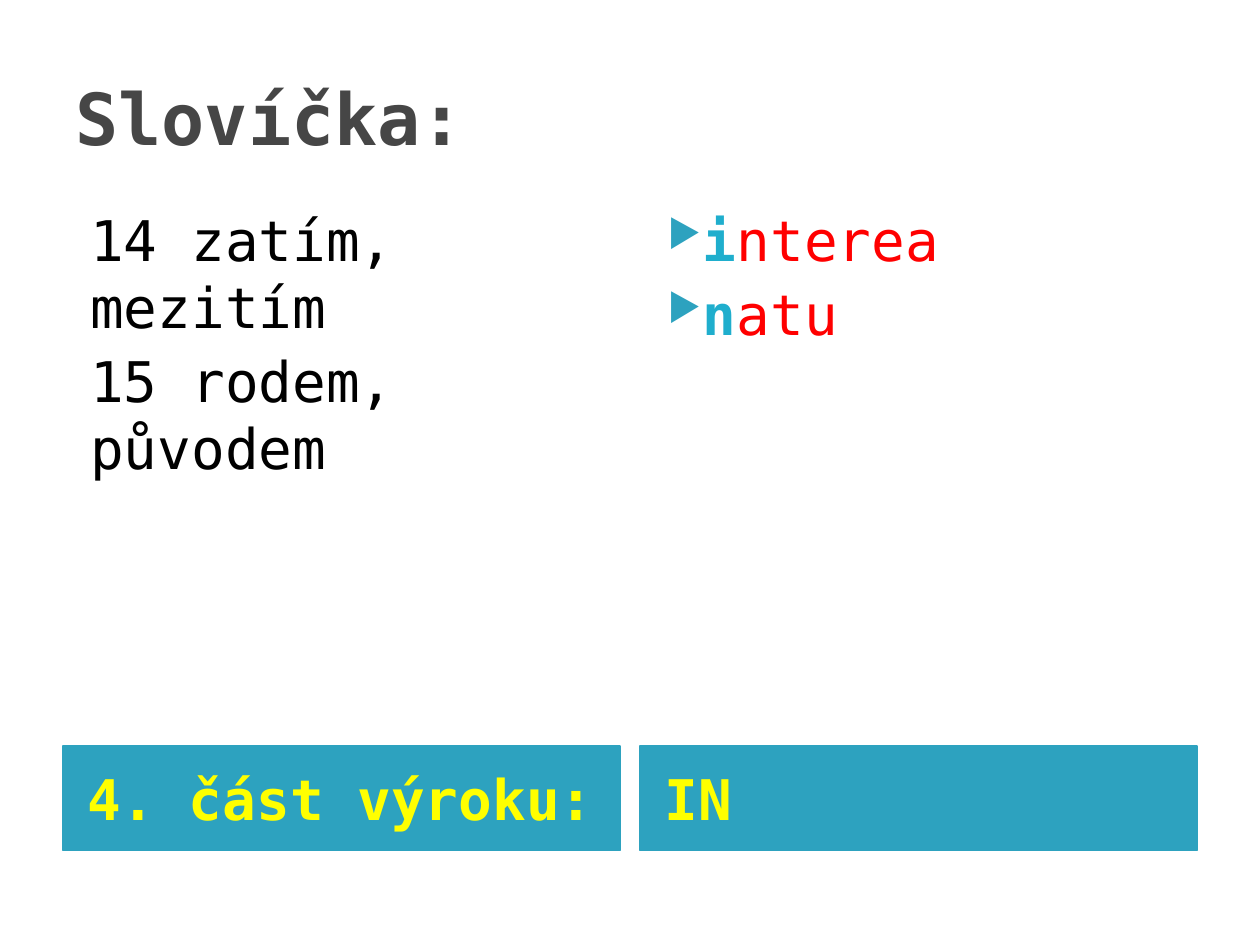
"""Builds a Latin vocabulary slide with two word columns and a result bar."""
from dataclasses import dataclass

from lxml.etree import SubElement
from pptx import Presentation
from pptx.dml.color import RGBColor as Rgb
from pptx.enum.shapes import MSO_SHAPE as Preset
from pptx.enum.text import MSO_ANCHOR as Anchor, PP_ALIGN as Align
from pptx.oxml.ns import qn
from pptx.util import Cm, Pt


@dataclass(frozen=True)
class Theme:
    font: str = "DejaVu Sans Mono"
    heading: str = "464646"
    czech: str = "000000"
    initial: str = "1FAECD"
    latin: str = "FF0000"
    bar: str = "2DA2BF"
    bar_text: str = "FFFF00"
    title_size: int = 41
    body_size: int = 32
    gap: int = 4


class VocabularySlide:
    def __init__(self, slide, theme):
        self.slide = slide
        self.theme = theme

    def style(self, run, color, bold=False, size=None):
        run.font.name = self.theme.font
        run.font.size = Pt(size or self.theme.body_size)
        run.font.bold = bold
        run.font.color.rgb = Rgb.from_string(color)

    def frame(self, left, top, width, height):
        frame = self.slide.shapes.add_textbox(Cm(left), Cm(top), Cm(width), Cm(height)).text_frame
        frame.word_wrap = True
        return frame

    def paragraphs(self, frame, count):
        for index in range(count):
            paragraph = frame.add_paragraph() if index else frame.paragraphs[0]
            if index:
                paragraph.space_before = Pt(self.theme.gap)
            yield paragraph

    def indent(self, paragraph, margin, first=0):
        properties = paragraph._p.get_or_add_pPr()
        properties.set("marL", str(Cm(margin)))
        properties.set("indent", str(Cm(first)))
        return properties

    def title(self, text, *box):
        frame = self.frame(*box)
        frame.vertical_anchor = Anchor.MIDDLE
        frame.text = text
        self.style(frame.paragraphs[0].runs[0], self.theme.heading, True, self.theme.title_size)

    def meanings(self, entries, *box):
        frame = self.frame(*box)
        for entry, paragraph in zip(entries, self.paragraphs(frame, len(entries))):
            self.indent(paragraph, 0.3)
            paragraph.text = entry
            self.style(paragraph.runs[0], self.theme.czech)

    def latin_words(self, words, *box):
        frame = self.frame(*box)
        for word, paragraph in zip(words, self.paragraphs(frame, len(words))):
            properties = self.indent(paragraph, 1.02, -0.71)
            bullet_color = SubElement(properties, qn("a:buClr"))
            SubElement(bullet_color, qn("a:srgbClr"), val=self.theme.bar)
            SubElement(properties, qn("a:buSzPct"), val="68000")
            SubElement(properties, qn("a:buChar"), char="▶")
            paragraph.text = word[0]
            self.style(paragraph.runs[0], self.theme.initial, True)
            ending = paragraph.add_run()
            ending.text = word[1:]
            self.style(ending, self.theme.latin)

    def bar(self, text, left, top, width, height):
        bar = self.slide.shapes.add_shape(
            Preset.RECTANGLE, Cm(left), Cm(top), Cm(width), Cm(height))
        bar.shadow.inherit = False
        bar.fill.solid()
        bar.fill.fore_color.rgb = Rgb.from_string(self.theme.bar)
        bar.line.color.rgb = Rgb.from_string(self.theme.bar)
        bar.line.width = Pt(0.75)
        frame = bar.text_frame
        frame.word_wrap = True
        frame.vertical_anchor = Anchor.MIDDLE
        frame.margin_left = Cm(0.5)
        frame.text = text
        frame.paragraphs[0].alignment = Align.LEFT
        self.style(frame.paragraphs[0].runs[0], self.theme.bar_text, True)


def main():
    deck = Presentation()
    deck.slide_width, deck.slide_height = Cm(25.4), Cm(19.05)
    page = VocabularySlide(deck.slides.add_slide(deck.slide_layouts[6]), Theme())

    margin, column_width = 1.27, 11.23
    right = 25.4 - margin - column_width
    words_top, words_height = 4.01, 10.95
    bar_top, bar_height = 15.04, 2.11

    page.title("Slovíčka:", margin, 0.76, 22.86, 3.18)
    for left, answer in ((margin, "4. část výroku:"), (right, "IN")):
        page.bar(answer, left, bar_top, column_width, bar_height)
    page.meanings(["14 zatím, mezitím", "15 rodem, původem"],
                  margin, words_top, column_width, words_height)
    page.latin_words(["interea", "natu"], right, words_top, column_width, words_height)

    deck.save("out.pptx")


if __name__ == "__main__":
    main()
